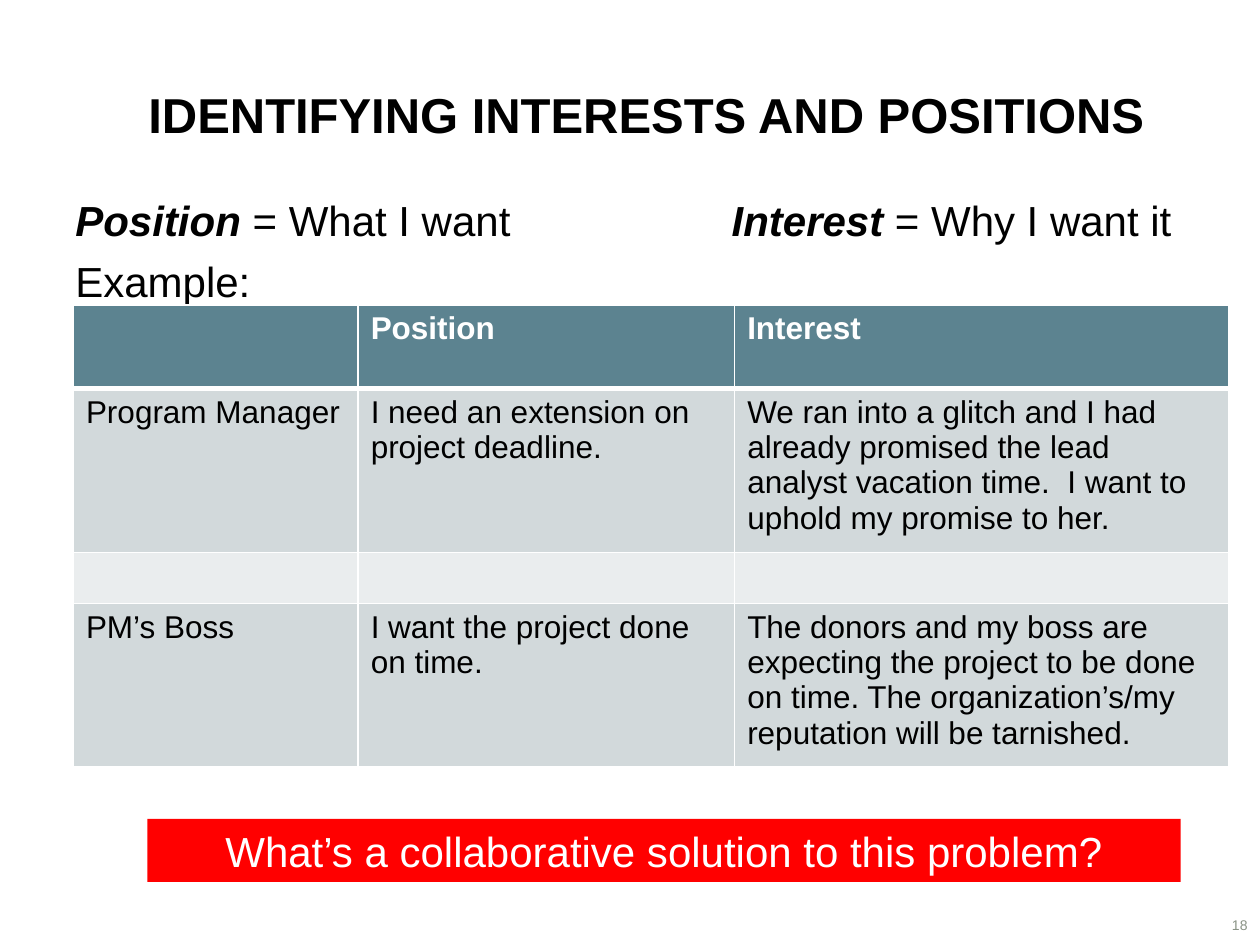
from dataclasses import dataclass

from lxml.etree import SubElement
from pptx import Presentation
from pptx.dml.color import RGBColor
from pptx.enum.shapes import MSO_SHAPE
from pptx.enum.text import MSO_ANCHOR, PP_ALIGN
from pptx.oxml.ns import qn
from pptx.util import Cm, Pt


@dataclass(frozen=True)
class Theme:
    font: str = "Arial"
    ink: str = "000000"
    white: str = "FFFFFF"
    header: str = "5C8390"
    band: str = "D2D9DB"
    pale_band: str = "EAEDEE"
    alert: str = "FF0000"
    muted: str = "8A9386"
    title_size: int = 28
    body_size: int = 24
    cell_size: int = 18
    number_size: int = 8


@dataclass(frozen=True)
class Box:
    left: float
    top: float
    width: float
    height: float

    def lengths(self) -> tuple:
        return Cm(self.left), Cm(self.top), Cm(self.width), Cm(self.height)


@dataclass(frozen=True)
class Style:
    size: int
    color: str
    bold: bool = False
    italic: bool = False


@dataclass(frozen=True)
class TableRow:
    height: float
    fill: str
    style: Style
    texts: tuple
    bottom_line: int = 1


THEME = Theme()
BODY = Style(THEME.body_size, THEME.ink)
TERM = Style(THEME.body_size, THEME.ink, bold=True, italic=True)
HEADING = Style(THEME.cell_size, THEME.white, bold=True)
CELL = Style(THEME.cell_size, THEME.ink)
BLANK = ("", "", "")
COLUMN_WIDTHS = (5.74, 7.59, 9.96)
ROWS = (
    TableRow(1.68, THEME.header, HEADING, ("", "Position", "Interest"), 3),
    TableRow(3.3, THEME.band, CELL, (
        "Program Manager",
        "I need an extension on project deadline.",
        "We ran into a glitch and I had already promised the lead analyst "
        "vacation time.  I want to uphold my promise to her.",
    )),
    TableRow(1.03, THEME.pale_band, CELL, BLANK),
    TableRow(3.3, THEME.band, CELL, (
        "PM’s Boss",
        "I want the project done on time.",
        "The donors and my boss are expecting the project to be done on time. "
        "The organization’s/my reputation will be tarnished.",
    )),
)


def add_run(paragraph, text: str, style: Style) -> None:
    run = paragraph.add_run()
    run.text = text
    run.font.name = THEME.font
    run.font.size = Pt(style.size)
    run.font.bold = style.bold
    run.font.italic = style.italic
    run.font.color.rgb = RGBColor.from_string(style.color)


def add_text_frame(slide, box: Box, anchor=MSO_ANCHOR.TOP):
    frame = slide.shapes.add_textbox(*box.lengths()).text_frame
    frame.word_wrap = True
    frame.vertical_anchor = anchor
    return frame


def add_line(slide, box: Box, text: str, style: Style, align, anchor=MSO_ANCHOR.TOP) -> None:
    paragraph = add_text_frame(slide, box, anchor).paragraphs[0]
    paragraph.alignment = align
    add_run(paragraph, text, style)


def add_definitions(slide, box: Box) -> None:
    frame = add_text_frame(slide, box)
    definitions = frame.paragraphs[0]
    tabs = SubElement(definitions._p.get_or_add_pPr(), qn("a:tabLst"))
    SubElement(tabs, qn("a:tab"), pos=str(Cm(13.23)), algn="l")
    add_run(definitions, "Position", TERM)
    add_run(definitions, " = What I want\t", BODY)
    add_run(definitions, "Interest", TERM)
    add_run(definitions, " = Why I want it", BODY)
    example = frame.add_paragraph()
    example.space_before = Pt(6)
    add_run(example, "Example:", BODY)


def set_borders(cell, top: int, bottom: int) -> None:
    properties = cell._tc.get_or_add_tcPr()
    for side, points in (("L", 1), ("R", 1), ("T", top), ("B", bottom)):
        border = SubElement(properties, qn(f"a:ln{side}"), w=str(Pt(points)))
        fill = SubElement(border, qn("a:solidFill"))
        SubElement(fill, qn("a:srgbClr"), val=THEME.white)


def add_comparison(slide, box: Box) -> None:
    table = slide.shapes.add_table(len(ROWS), len(COLUMN_WIDTHS), *box.lengths()).table
    for column, width in zip(table.columns, COLUMN_WIDTHS):
        column.width = Cm(width)
    top_line = 1
    for row, content in zip(table.rows, ROWS):
        row.height = Cm(content.height)
        for cell, text in zip(row.cells, content.texts):
            set_borders(cell, top_line, content.bottom_line)
            cell.fill.solid()
            cell.fill.fore_color.rgb = RGBColor.from_string(content.fill)
            if text:
                add_run(cell.text_frame.paragraphs[0], text, content.style)
        top_line = content.bottom_line


def add_question(slide, box: Box, text: str) -> None:
    banner = slide.shapes.add_shape(MSO_SHAPE.RECTANGLE, *box.lengths())
    banner.shadow.inherit = False
    banner.fill.solid()
    banner.fill.fore_color.rgb = RGBColor.from_string(THEME.alert)
    banner.line.fill.background()
    banner.text_frame.word_wrap = True
    banner.text_frame.vertical_anchor = MSO_ANCHOR.MIDDLE
    question = banner.text_frame.paragraphs[0]
    question.alignment = PP_ALIGN.CENTER
    add_run(question, text, Style(THEME.body_size, THEME.white))


def main() -> None:
    """Build the slide on identifying interests and positions."""
    deck = Presentation()
    deck.slide_width, deck.slide_height = Cm(25.4), Cm(19.05)
    slide = deck.slides.add_slide(deck.slide_layouts[6])
    add_definitions(slide, Box(1.27, 3.8, 23.5, 12.57))
    add_line(slide, Box(22.86, 18.36, 2.54, 0.69), "18",
             Style(THEME.number_size, THEME.muted), PP_ALIGN.RIGHT)
    add_line(slide, Box(1.7, 1.58, 22.66, 1.45), "IDENTIFYING INTERESTS AND POSITIONS",
             Style(THEME.title_size, THEME.ink, bold=True), PP_ALIGN.CENTER, MSO_ANCHOR.MIDDLE)
    add_comparison(slide, Box(1.48, 6.15, sum(COLUMN_WIDTHS), sum(row.height for row in ROWS)))
    add_question(slide, Box(2.97, 16.51, 20.83, 1.27),
                 "What’s a collaborative solution to this problem?")
    deck.save("out.pptx")


if __name__ == "__main__":
    main()
